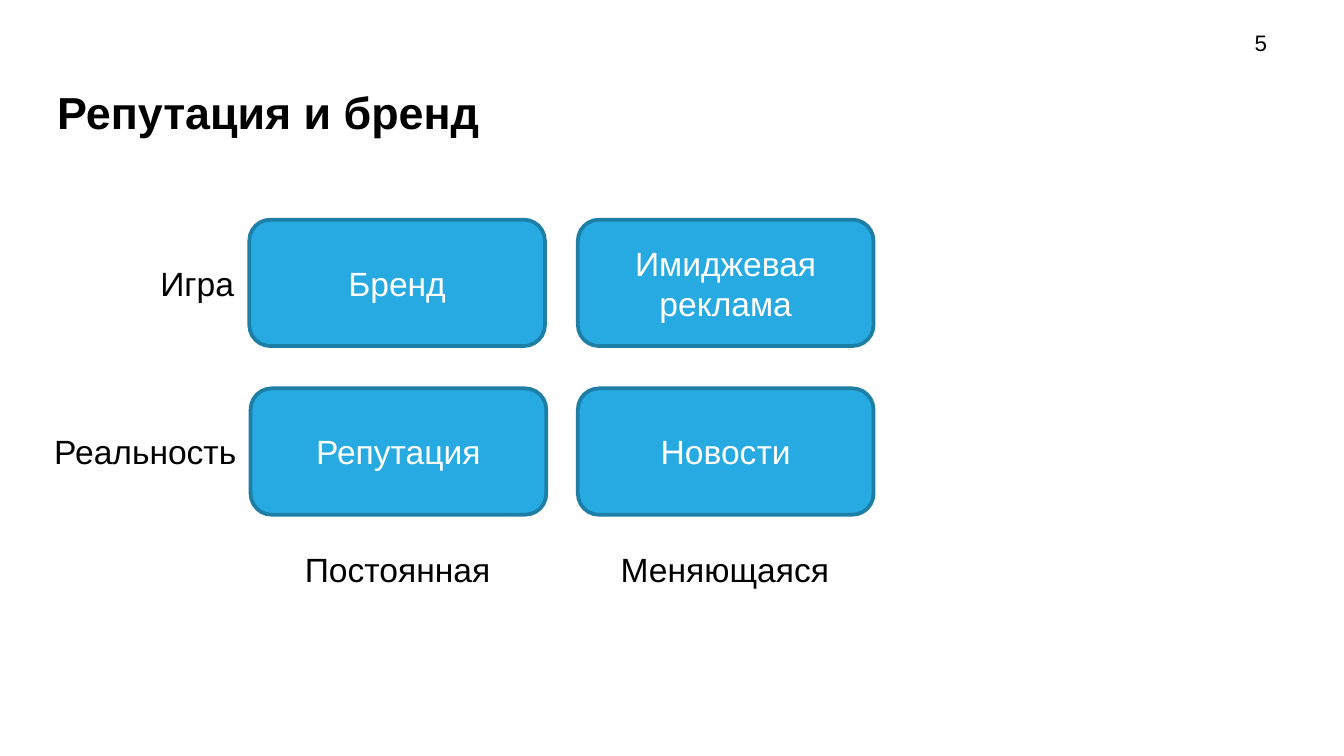
from pptx import Presentation
from pptx.dml.color import RGBColor
from pptx.enum.shapes import MSO_SHAPE
from pptx.enum.text import MSO_ANCHOR, MSO_AUTO_SIZE, PP_ALIGN
from pptx.util import Emu, Pt

ROUND_RECT = MSO_SHAPE.ROUNDED_RECTANGLE
TOP, MIDDLE = MSO_ANCHOR.TOP, MSO_ANCHOR.MIDDLE
LEFT, CENTER, RIGHT = PP_ALIGN.LEFT, PP_ALIGN.CENTER, PP_ALIGN.RIGHT
FIT_SHAPE = MSO_AUTO_SIZE.SHAPE_TO_FIT_TEXT

PX = 4572  # 200 px to the inch
BLACK, WHITE, BLUE, DARK_BLUE = "000000", "FFFFFF", "27AAE1", "1D7EA6"

# Matrix grid: the lower left card sits slightly to the right
CARD_W, CARD_H, LABEL_H = 440, 188, 80
COLUMN_LABEL_TOP = 807
COLUMNS = [("Постоянная", 374, 320), ("Меняющаяся", 860, 352)]
ROWS = [
    ("Игра", 327, 152, [("Бренд", 371), ("Имиджевая реклама", 860)]),
    ("Реальность", 578, 312, [("Репутация", 373), ("Новости", 860)]),
]


def px(*values):
    return [Emu(v * PX) for v in values]


def color(value):
    return RGBColor.from_string(value)


def write(sp, text, size, ink=BLACK, align=LEFT, anchor=TOP, bold=False):
    tf = sp.text_frame
    tf.vertical_anchor = anchor
    p = tf.paragraphs[0]
    p.text = text
    p.alignment = align
    p.font.name = "Arial"
    p.font.size = Pt(size)
    p.font.bold = bold
    p.font.color.rgb = color(ink)


def add_title(s, text):
    sp = s.shapes.title
    sp.left, sp.top, sp.width, sp.height = px(85, 126, 1820, 172)
    tf = sp.text_frame
    tf.margin_left = tf.margin_top = tf.margin_right = tf.margin_bottom = 0
    write(sp, text, 24, bold=True)


def add_page_number(s, text):
    sp = s.shapes.add_textbox(*px(1434, 42, 471, 44))
    sp.text_frame.word_wrap = True
    write(sp, text, 12, align=RIGHT, anchor=MIDDLE)


def add_card(s, text, x, y):
    sp = s.shapes.add_shape(ROUND_RECT, *px(x, y, CARD_W, CARD_H))
    sp.shadow.inherit = False
    sp.fill.solid()
    sp.fill.fore_color.rgb = color(BLUE)
    sp.line.color.rgb = color(DARK_BLUE)
    sp.line.width = Pt(2)
    write(sp, text, 18, WHITE, CENTER, MIDDLE)


def add_label(s, text, x, y, width):
    sp = s.shapes.add_textbox(*px(x, y, width, LABEL_H))
    sp.text_frame.word_wrap = False
    sp.text_frame.auto_size = FIT_SHAPE
    write(sp, text, 18)


def main():
    prs = Presentation()
    prs.slide_width, prs.slide_height = px(2000, 1125)
    s = prs.slides.add_slide(prs.slide_layouts[5])

    # Heading and page number
    add_title(s, "Репутация и бренд")
    add_page_number(s, "5")

    # Rows of cards, each with a label ending at its first card
    for label, y, label_w, cards in ROWS:
        for text, x in cards:
            add_card(s, text, x, y)
        add_label(s, label, cards[0][1] - label_w,
                  y + (CARD_H - LABEL_H) // 2, label_w)

    # Column labels centred under the cards
    for label, x, label_w in COLUMNS:
        add_label(s, label, x + (CARD_W - label_w) // 2,
                  COLUMN_LABEL_TOP, label_w)

    prs.save("out.pptx")


if __name__ == "__main__":
    main()
